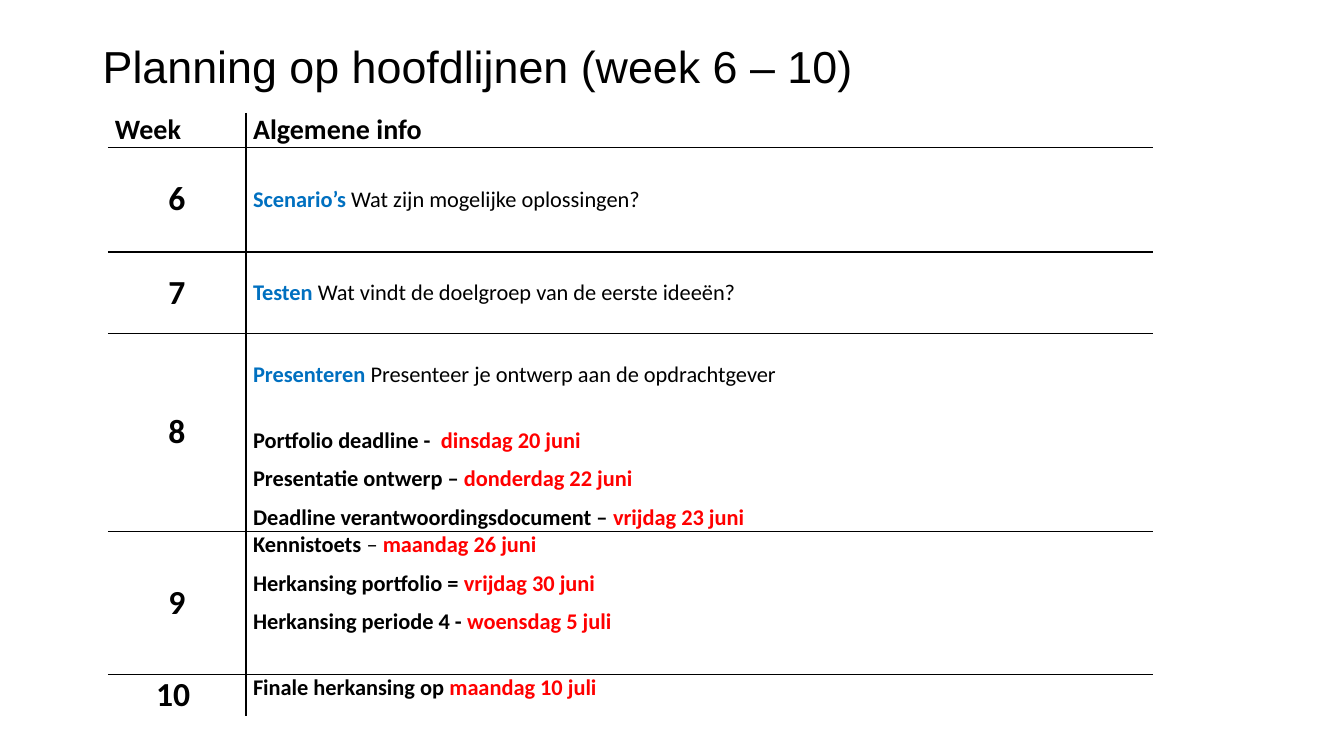
from lxml import etree
from pptx import Presentation
from pptx.dml.color import RGBColor
from pptx.enum.text import MSO_ANCHOR, PP_ALIGN
from pptx.oxml.ns import qn
from pptx.util import Inches, Pt

BLACK = RGBColor(0x00, 0x00, 0x00)
BLUE = RGBColor(0x00, 0x70, 0xC0)
RED = RGBColor(0xFF, 0x00, 0x00)
TOP, MIDDLE = MSO_ANCHOR.TOP, MSO_ANCHOR.MIDDLE
LEFT, CENTER = PP_ALIGN.LEFT, PP_ALIGN.CENTER
NO_STYLE = "{2D5ABB26-0587-4C30-8999-92F81FD0307C}"

TITLE = "Planning op hoofdlijnen (week 6 – 10)"
HEADINGS = ("Week", "Algemene info")


def theme(name, question):
    return [(name, BLUE, True), (question, BLACK, False)]


def deadline(label, date):
    return [(label, BLACK, True), (date, RED, True)]


# week, row height, anchor of the info, margin above it, lines
WEEKS = [
    ("6", 1.04, MIDDLE, 0, [theme("Scenario’s ", "Wat zijn mogelijke oplossingen?")]),
    ("7", 0.81, MIDDLE, 0, [theme("Testen ", "Wat vindt de doelgroep van de eerste ideeën?")]),
    ("8", 1.96, TOP, 0.27, [
        theme("Presenteren ", "Presenteer je ontwerp aan de opdrachtgever"),
        deadline("Portfolio deadline -  ", "dinsdag 20 juni"),
        deadline("Presentatie ontwerp – ", "donderdag 22 juni"),
        deadline("Deadline verantwoordingsdocument – ", "vrijdag 23 juni"),
    ]),
    ("9", 1.42, TOP, 0, [
        [("Kennistoets", BLACK, True), (" – ", BLACK, False), ("maandag 26 juni", RED, True)],
        deadline("Herkansing portfolio = ", "vrijdag 30 juni"),
        deadline("Herkansing periode 4 - ", "woensdag 5 juli"),
    ]),
    ("10 ", 0.41, TOP, 0, [deadline("Finale herkansing op ", "maandag 10 juli")]),
]
HEADER_HEIGHT = 0.34
COLUMN_WIDTHS = (1.37, 9.0)
LINE_GAP, THEME_GAP = 8, 27.5


def add_run(paragraph, text, size, color=BLACK, bold=True, font="Calibri"):
    run = paragraph.add_run()
    run.text = text
    run.font.name = font
    run.font.size = Pt(size)
    run.font.bold = bold
    run.font.color.rgb = color


def set_borders(cell, sides):
    """Draw the sides named in the string (L, R, T, B) and clear the others."""
    properties = cell._tc.get_or_add_tcPr()
    for place, side in enumerate("LRTB"):
        line = etree.Element(qn(f"a:ln{side}"), w=str(Pt(1)))
        if side in sides:
            fill = etree.SubElement(line, qn("a:solidFill"))
            etree.SubElement(fill, qn("a:srgbClr"), val=str(BLACK))
        else:
            etree.SubElement(line, qn("a:noFill"))
        properties.insert(place, line)


def fill_cell(cell, lines, size, anchor=TOP, align=LEFT, margin_top=0):
    cell.fill.background()
    cell.vertical_anchor = anchor
    cell.margin_left = cell.margin_right = Inches(0.07)
    cell.margin_top, cell.margin_bottom = Inches(margin_top), 0
    frame = cell.text_frame
    for number, runs in enumerate(lines):
        paragraph = frame.add_paragraph() if number else frame.paragraphs[0]
        paragraph.alignment = align
        if number < len(lines) - 1:
            paragraph.space_after = Pt(THEME_GAP if runs[0][1] == BLUE else LINE_GAP)
        for text, color, bold in runs:
            add_run(paragraph, text, size, color, bold)


def add_title(slide):
    box = slide.shapes.add_textbox(Inches(0.92), Inches(0.4), Inches(8.49), Inches(0.46))
    box.text_frame.word_wrap = True
    paragraph = box.text_frame.paragraphs[0]
    paragraph.line_spacing = 0.9
    add_run(paragraph, TITLE, 32, bold=False, font="Arial")


def add_planning(slide):
    heights = [HEADER_HEIGHT] + [week[1] for week in WEEKS]
    planning = slide.shapes.add_table(
        len(heights), len(COLUMN_WIDTHS), Inches(1.07), Inches(1.12),
        Inches(sum(COLUMN_WIDTHS)), Inches(sum(heights))).table
    planning._tbl.tblPr.find(qn("a:tableStyleId")).text = NO_STYLE
    planning.first_row = planning.horz_banding = False
    for column, width in zip(planning.columns, COLUMN_WIDTHS):
        column.width = Inches(width)
    for row, height in zip(planning.rows, heights):
        row.height = Inches(height)

    for column, heading in enumerate(HEADINGS):
        fill_cell(planning.cell(0, column), [[(heading, BLACK, True)]], 20)
    for row, (week, _, anchor, margin_top, lines) in enumerate(WEEKS, 1):
        fill_cell(planning.cell(row, 0), [[(week, BLACK, True)]], 24, MIDDLE, CENTER)
        fill_cell(planning.cell(row, 1), lines, 16, anchor, margin_top=margin_top)

    for row in range(len(heights)):
        across = ("T" if row else "") + ("B" if row < len(WEEKS) else "")
        set_borders(planning.cell(row, 0), "R" + across)
        set_borders(planning.cell(row, 1), "L" + across)


def main():
    deck = Presentation()
    deck.slide_width, deck.slide_height = Inches(13.33), Inches(7.5)
    slide = deck.slides.add_slide(deck.slide_layouts[6])
    add_title(slide)
    add_planning(slide)
    deck.save("out.pptx")


if __name__ == "__main__":
    main()
